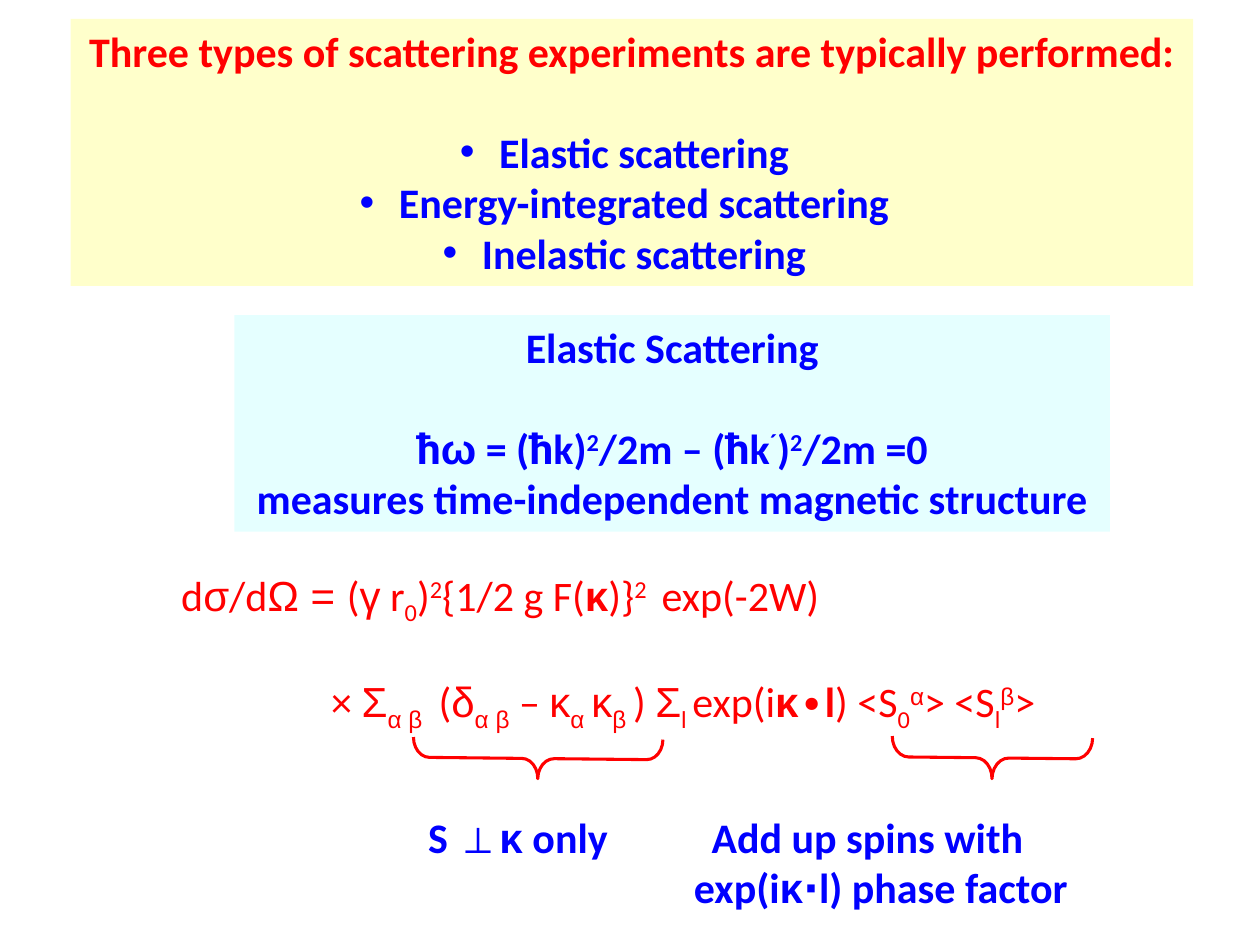
"""Build a slide on elastic scattering and its magnetic cross section."""
from dataclasses import dataclass

from lxml.etree import SubElement
from pptx import Presentation
from pptx.dml.color import RGBColor
from pptx.enum.shapes import MSO_SHAPE
from pptx.enum.text import MSO_ANCHOR, PP_ALIGN
from pptx.oxml.ns import qn
from pptx.util import Inches, Pt


@dataclass(frozen=True)
class Theme:
    red: str = "FF0000"
    blue: str = "0000FF"
    yellow: str = "FFFF99"
    cyan: str = "CCFFFF"
    opacity: int = 50000
    latin: str = "Calibri"
    greek: str = "Arial"
    planck: str = "Roboto"
    size: int = 24
    line: float = 1.75
    superscript: int = 30000
    subscript: int = -25000


theme = Theme()
presentation = Presentation()
presentation.slide_width = Inches(10)
presentation.slide_height = Inches(7.5)
slide = presentation.slides.add_slide(presentation.slide_layouts[6])
column = presentation.slide_width / 100
row = presentation.slide_height / 75


def place(left, top, width, height):
    return [round(value) for value in (left * column, top * row, width * column, height * row)]


def write(frame, text, color=theme.blue, bold=True, align=PP_ALIGN.LEFT, before=0, indent=0, bullet=False):
    paragraph = frame.paragraphs[0] if not frame.text else frame.add_paragraph()
    paragraph.alignment = align
    paragraph.space_before = Pt(before)
    properties = paragraph._p.get_or_add_pPr()
    if indent:
        properties.set("marL", str(round(indent * column)))
    if bullet:
        SubElement(properties, qn("a:buFont")).set("typeface", theme.greek)
        SubElement(properties, qn("a:buChar")).set("char", "•")
    for piece, kinds in [(text, "")] if isinstance(text, str) else text:
        run = paragraph.add_run()
        run.text = piece
        run.font.name = theme.greek if "greek" in kinds else theme.planck if "planck" in kinds else theme.latin
        run.font.size = Pt(theme.size)
        run.font.bold = bold or "bold" in kinds
        run.font.color.rgb = RGBColor.from_string(color)
        if "sub" in kinds or "sup" in kinds:
            baseline = theme.subscript if "sub" in kinds else theme.superscript
            run._r.get_or_add_rPr().set("baseline", str(baseline))


panels = []
for color, area in (
    (theme.yellow, (5.6, 1.5, 89.1, 21.2)),
    (theme.cyan, (18.6, 25, 69.5, 17.2)),
):
    panel = slide.shapes.add_shape(MSO_SHAPE.RECTANGLE, *place(*area))
    panel.shadow.inherit = False
    panel.fill.solid()
    panel.fill.fore_color.rgb = RGBColor.from_string(color)
    fill_color = panel._element.spPr.find(qn("a:solidFill"))[0]
    SubElement(fill_color, qn("a:alpha")).set("val", str(theme.opacity))
    panel.line.fill.background()
    panel.text_frame.word_wrap = False
    panel.text_frame.vertical_anchor = MSO_ANCHOR.TOP
    panels.append(panel.text_frame)

overview, elastic = panels
write(overview, "Three types of scattering experiments are typically performed:", color=theme.red, align=PP_ALIGN.CENTER)
for number, experiment in enumerate(("Elastic", "Energy-integrated", "Inelastic")):
    write(overview, f" {experiment} scattering", align=PP_ALIGN.CENTER, before=0 if number else 29, bullet=True)

energy_balance = [
    ("ħ", "planck"), ("ω", "greek"), (" = (", ""), ("ħ", "planck"), ("k)", ""), ("2", "sup"),
    ("/2m – (", ""), ("ħ", "planck"), ("k", ""), ("´", "sup"), (")", ""), ("2", "sup"), ("/2m =0", ""),
]
write(elastic, "Elastic Scattering", align=PP_ALIGN.CENTER)
write(elastic, energy_balance, align=PP_ALIGN.CENTER, before=29)
write(elastic, "measures time-independent magnetic structure", align=PP_ALIGN.CENTER)

prefactor = [
    ("d", ""), ("σ", "greek"), ("/d", ""), ("Ω = ", "greek"), ("(", ""), ("γ", "greek"), (" r", ""),
    ("0", "sub"), (")", ""), ("2", "sup"), ("{1/2 g F(", ""), ("κ", "greek bold"), (")}", ""),
    ("2 ", "sup"), (" exp(-2W)", ""),
]
spin_sum = [
    ("× ", ""), ("Σ", "greek"), ("α β ", "greek sub"), (" (", ""), ("δ", "greek"), ("α β", "greek sub"),
    (" – ", ""), ("κ", "greek"), ("α ", "greek sub"), ("κ", "greek"), ("β ", "greek sub"), (") ", ""),
    ("Σ", "greek"), ("l ", "sub"), ("exp(i", ""), ("κ", "greek bold"), ("∙", ""), ("l", "bold"),
    (") <S", ""), ("0", "sub"), ("α", "greek sup"), ("> <S", ""), ("l", "sub"), ("β", "greek sup"), (">", ""),
]
perpendicular = [("S ", ""), ("⊥κ", "greek"), (" only", "")]
phase_factor = [("exp(i", ""), ("κ", "greek"), ("∙l) phase factor", "")]

for area, lines in (
    ((13.4, 44.7, 74.7, 14), [
        (prefactor, dict(color=theme.red, bold=False)),
        (spin_sum, dict(color=theme.red, bold=False, before=28, indent=11.9)),
    ]),
    ((33, 63.9, 20, 5), [(perpendicular, {})]),
    ((54.1, 63.9, 34, 9), [("Add up spins with", dict(indent=1.4)), (phase_factor, {})]),
):
    box = slide.shapes.add_textbox(*place(*area))
    box.text_frame.word_wrap = True
    for text, style in lines:
        write(box.text_frame, text, **style)

for area in ((41.1, 50.3, 3.2, 19.8), (77.1, 52.2, 3.3, 15.9)):
    brace = slide.shapes.add_shape(MSO_SHAPE.LEFT_BRACE, *place(*area))
    brace.shadow.inherit = False
    brace.rotation = 270.6
    brace.adjustments[0] = 0.4
    brace.adjustments[1] = 0.5
    brace.fill.background()
    brace.line.color.rgb = RGBColor.from_string(theme.red)
    brace.line.width = Pt(theme.line)

presentation.save("out.pptx")
